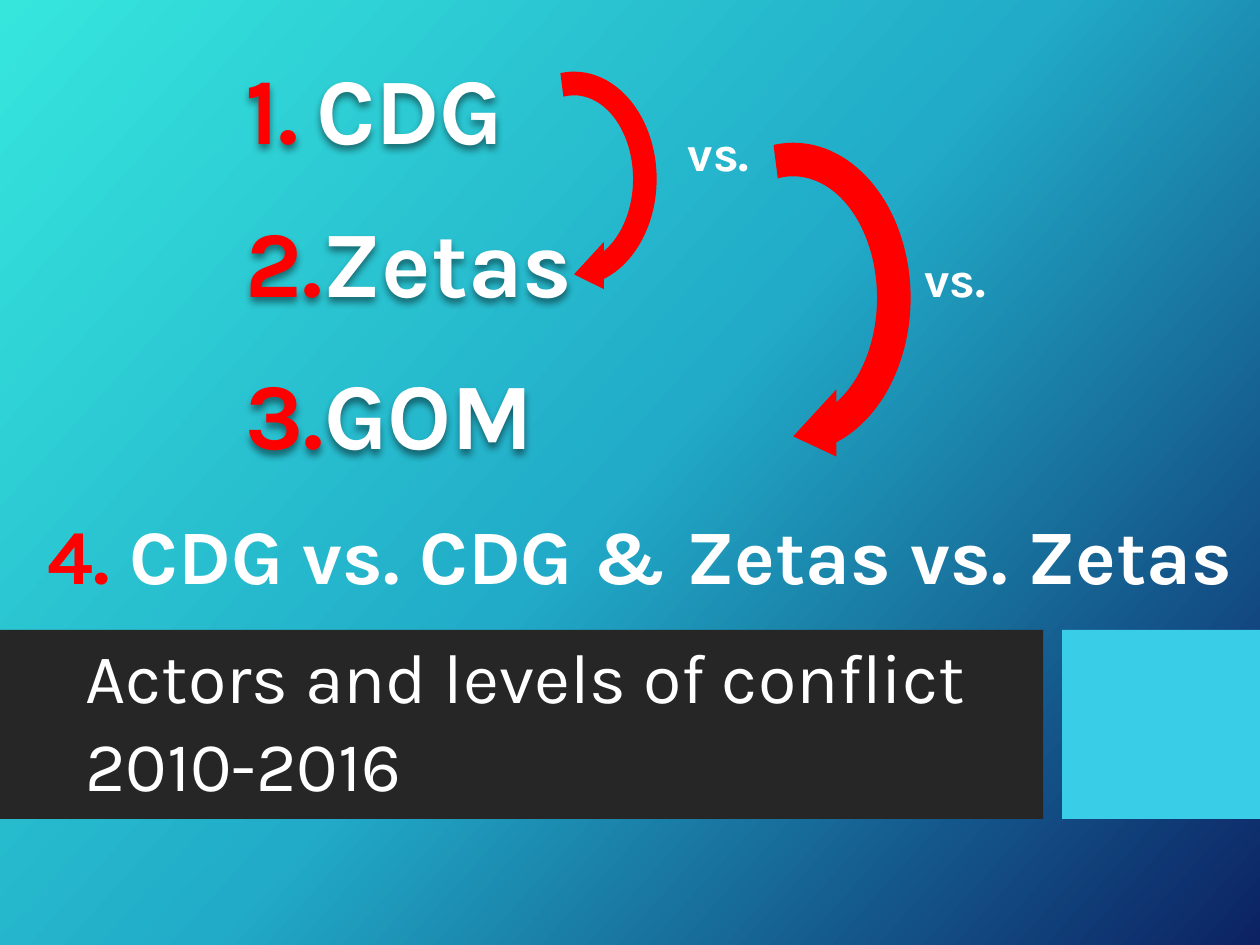
"""Build the slide on actors and levels of conflict, 2010-2016."""
from copy import deepcopy

from lxml import etree
from pptx import Presentation
from pptx.dml.color import RGBColor
from pptx.enum.shapes import MSO_SHAPE
from pptx.enum.text import MSO_ANCHOR, MSO_AUTO_SIZE, PP_ALIGN
from pptx.oxml.ns import qn
from pptx.util import Inches, Pt

RECTANGLE = MSO_SHAPE.RECTANGLE
CIRCULAR_ARROW = MSO_SHAPE.CIRCULAR_ARROW
TOP, BOTTOM = MSO_ANCHOR.TOP, MSO_ANCHOR.BOTTOM
LEFT = PP_ALIGN.LEFT
NO_AUTOFIT = MSO_AUTO_SIZE.NONE
TITLE_ONLY = 5

FONT = "Karla"
COLORS = {
    "aqua": "36E6DD", "teal": "21ABC8", "navy": "0C2263",
    "band": "262626", "accent": "39CDE7",
    "red": "FF0000", "white": "FFFFFF", "shadow": "000000",
}
ARROW_ADJUSTMENTS = (0.125, 11.42, 204.58, 103.6, 0.125)


def rgb(name):
    """Return the named palette colour."""
    return RGBColor.from_string(COLORS[name])


def add_element(parent, tag, **attributes):
    """Append a drawing element with the given attributes."""
    values = {key: str(value) for key, value in attributes.items()}
    return etree.SubElement(parent, qn(tag), values)


class SlideBuilder:
    """Hold the style and the current slide."""

    def __init__(self, slide):
        """Start on the given slide."""
        self.slide = slide
        self.shapes = slide.shapes

    def background(self, names, angle):
        """Fill the background with evenly spaced gradient colours."""
        fill = self.slide.background.fill
        fill.gradient()
        fill.gradient_angle = angle
        stop_list = self.slide.element.find(".//" + qn("a:gsLst"))
        while len(stop_list) < len(names):
            stop_list.append(deepcopy(stop_list[-1]))
        for index, (stop, name) in enumerate(zip(fill.gradient_stops, names)):
            stop.position = index / (len(names) - 1)
            stop.color.rgb = rgb(name)

    def shape(self, preset, box, color):
        """Add a flat preset shape."""
        shape = self.shapes.add_shape(preset, *map(Inches, box))
        shape.shadow.inherit = False
        shape.fill.solid()
        shape.fill.fore_color.rgb = rgb(color)
        shape.line.fill.background()
        return shape

    def arrow(self, box):
        """Add a curved arrow that points back to the left."""
        arrow = self.shape(CIRCULAR_ARROW, box, "red")
        arrow.rotation = 90
        for index, value in enumerate(ARROW_ADJUSTMENTS):
            arrow.adjustments[index] = value

    def frame(self, holder, anchor=TOP):
        """Prepare the text frame of a holder."""
        frame = holder.text_frame
        frame.word_wrap = True
        frame.auto_size = NO_AUTOFIT
        frame.vertical_anchor = anchor
        return frame

    def textbox(self, box):
        """Add an empty text box."""
        return self.shapes.add_textbox(*map(Inches, box))

    def run(self, paragraph, text, size, color="white", bold=True):
        """Add one styled run."""
        run = paragraph.add_run()
        run.text = text
        run.font.name = FONT
        run.font.size = Pt(size)
        run.font.bold = bold
        run.font.color.rgb = rgb(color)

    def text(self, box, runs, size):
        """Add a text box with one line of (text, colour) runs."""
        paragraph = self.frame(self.textbox(box)).paragraphs[0]
        for text, color in runs:
            self.run(paragraph, text, size, color)

    def heading(self, holder, text, anchor):
        """Write one line of the heading."""
        paragraph = self.frame(holder, anchor).paragraphs[0]
        paragraph.alignment = LEFT
        paragraph.line_spacing = 0.9
        self.run(paragraph, text, 40, bold=False)

    def title(self, box, text):
        """Move the title to the front and write it."""
        title = self.shapes.title
        title.left, title.top, title.width, title.height = map(Inches, box)
        title.element.getparent().append(title.element)
        self.heading(title, text, BOTTOM)

    def numbered_list(self, box, items):
        """Add a numbered list with a soft shadow."""
        holder = self.textbox(box)
        effects = add_element(holder.element.spPr, "a:effectLst")
        shadow = add_element(effects, "a:outerShdw", blurRad=Pt(4), dist=Pt(3),
                             dir=5400000, algn="t", rotWithShape=0)
        color = add_element(shadow, "a:srgbClr", val=COLORS["shadow"])
        add_element(color, "a:alpha", val=45000)
        frame = self.frame(holder)
        for index, item in enumerate(items):
            paragraph = frame.add_paragraph() if index else frame.paragraphs[0]
            paragraph.line_spacing = 0.7
            paragraph.space_after = Pt(42)
            properties = paragraph._p.get_or_add_pPr()
            properties.set("marL", str(Inches(0.56)))
            properties.set("indent", str(Inches(-0.56)))
            bullet_color = add_element(properties, "a:buClr")
            add_element(bullet_color, "a:srgbClr", val=COLORS["red"])
            add_element(properties, "a:buFont", typeface=FONT)
            add_element(properties, "a:buAutoNum", type="arabicPeriod")
            self.run(paragraph, item, 53.6)


def main():
    """Build and save the presentation."""
    deck = Presentation()
    deck.slide_width, deck.slide_height = Inches(10), Inches(7.5)
    builder = SlideBuilder(deck.slides.add_slide(deck.slide_layouts[TITLE_ONLY]))
    builder.background(("aqua", "teal", "navy"), 318)

    builder.shape(RECTANGLE, (0, 5, 8.28, 1.5), "band")
    builder.shape(RECTANGLE, (8.43, 5, 1.57, 1.5), "accent")
    period = builder.textbox((0.58, 5.75, 7.54, 0.6))
    builder.heading(period, "2010-2016", TOP)
    builder.title((0.58, 5.15, 7.54, 0.6), "Actors and levels of conflict")

    builder.numbered_list((1.85, 0.6, 7.02, 3.86), ("CDG", "Zetas", "GOM"))
    builder.arrow((3.61, 0.67, 1.89, 1.5))
    builder.arrow((4.93, 1.3, 2.73, 2.13))
    for box in ((5.36, 0.92, 1.26, 0.57), (7.24, 1.92, 1.02, 0.57)):
        builder.text(box, [("vs.", "white")], 28)
    infighting = [("4. ", "red"), ("CDG vs. CDG & Zetas vs. Zetas", "white")]
    builder.text((0.28, 3.98, 9.72, 1.58), infighting, 44)

    deck.save("out.pptx")


if __name__ == "__main__":
    main()
